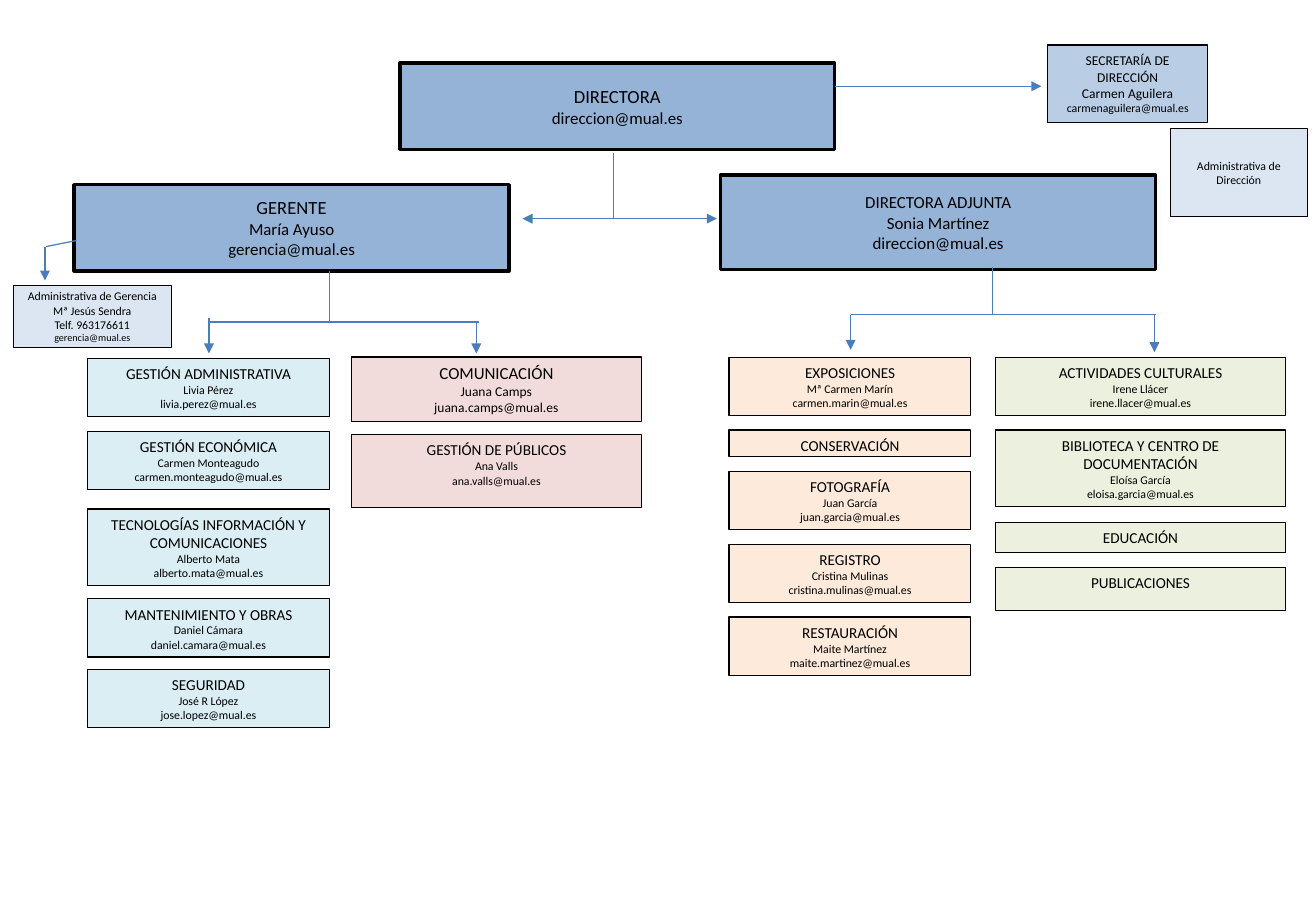
from lxml import etree
from pptx import Presentation
from pptx.dml.color import RGBColor
from pptx.enum.shapes import MSO_CONNECTOR, MSO_SHAPE
from pptx.enum.text import MSO_ANCHOR, PP_ALIGN
from pptx.oxml.ns import qn
from pptx.util import Pt

PX = 9144
RECT = MSO_SHAPE.RECTANGLE
STRAIGHT = MSO_CONNECTOR.STRAIGHT
TOP, MIDDLE = MSO_ANCHOR.TOP, MSO_ANCHOR.MIDDLE
CENTER = PP_ALIGN.CENTER
COLORS = {
    "black": "000000", "head": "95B3D7", "secretary": "B9CDE5", "assistant": "DCE6F2",
    "management": "DBEEF4", "communication": "F2DCDB", "collection": "FDEADA",
    "activities": "EBF1DE", "arrow": "4A7EBB", "branch": "4B7EBC",
}

HEADS = [
    (329, 52, 71, ["DIRECTORA", "direccion@mual.es"], [11, 10]),
    (61, 152, 71, ["GERENTE", "María Ayuso", "gerencia@mual.es"], [11, 10, 10]),
    (593, 144, 78, ["DIRECTORA ADJUNTA", "Sonia Martínez", "direccion@mual.es"], [10, 10, 10]),
]
ASSISTANTS = [
    (862, 37, 132, 64, "secretary",
     ["SECRETARÍA DE DIRECCIÓN", "Carmen Aguilera", "carmenaguilera@mual.es"], [8, 8, 7]),
    (11, 235, 130, 51, "assistant",
     ["Administrativa de Gerencia", "Mª Jesús Sendra", "Telf. 963176611", "gerencia@mual.es"],
     [7, 7, 7, 6]),
    (963, 106, 113, 72, "assistant", ["Administrativa de Dirección"], [7]),
]
DEPARTMENTS = [
    (72, 199, "management", [
        (295, 48, ["GESTIÓN ADMINISTRATIVA", "Livia Pérez", "livia.perez@mual.es"]),
        (355, 48, ["GESTIÓN ECONÓMICA", "Carmen Monteagudo", "carmen.monteagudo@mual.es"]),
        (419, 63, ["TECNOLOGÍAS INFORMACIÓN Y COMUNICACIONES", "Alberto Mata",
                   "alberto.mata@mual.es"]),
        (493, 48, ["MANTENIMIENTO Y OBRAS", "Daniel Cámara", "daniel.camara@mual.es"]),
        (551, 48, ["SEGURIDAD", "José R López", "jose.lopez@mual.es"]),
    ]),
    (289, 239, "communication", [
        (294, 53, ["COMUNICACIÓN", "Juana Camps", "juana.camps@mual.es"]),
        (358, 60, ["GESTIÓN DE PÚBLICOS", "Ana Valls", "ana.valls@mual.es"]),
    ]),
    (600, 199, "collection", [
        (294, 48, ["EXPOSICIONES", "Mª Carmen Marín", "carmen.marin@mual.es"]),
        (354, 22, ["CONSERVACIÓN"]),
        (388, 48, ["FOTOGRAFÍA", "Juan García", "juan.garcia@mual.es"]),
        (448, 48, ["REGISTRO", "Cristina Mulinas", "cristina.mulinas@mual.es"]),
        (508, 48, ["RESTAURACIÓN", "Maite Martínez", "maite.martinez@mual.es"]),
    ]),
    (819, 239, "activities", [
        (294, 48, ["ACTIVIDADES CULTURALES", "Irene Llácer", "irene.llacer@mual.es"]),
        (354, 63, ["BIBLIOTECA Y CENTRO DE DOCUMENTACIÓN", "Eloísa García",
                   "eloisa.garcia@mual.es"]),
        (430, 25, ["EDUCACIÓN"]),
        (467, 36, ["PUBLICACIONES"]),
    ]),
]
ARROWS = [
    (687, 71, 857, 71), (504, 180, 430, 180), (504, 180, 590, 180), (37, 203, 37, 231),
    (172, 262, 172, 291), (392, 265, 392, 291), (700, 259, 700, 288), (950, 259, 950, 290),
]
BRANCHES = [
    (505, 126, 505, 180), (271, 223, 271, 265), (171, 265, 394, 265),
    (817, 220, 817, 259), (700, 259, 951, 259),
]


def write(p, text, size=9, color="black", font="Calibri", align=CENTER):
    p.alignment = align
    r = p.add_run()
    r.text = text
    r.font.size = Pt(size)
    r.font.name = font
    r.font.color.rgb = RGBColor.from_string(COLORS[color])


class OrgChart:
    """Draw organisation chart elements on one slide, in px."""

    def __init__(self, s):
        self.s = s

    def box(self, x, y, w, h, fill, lines, sizes, border=0.75, anchor=MIDDLE):
        sp = self.s.shapes.add_shape(RECT, x * PX, y * PX, w * PX, h * PX)
        sp.shadow.inherit = False
        sp.fill.solid()
        sp.fill.fore_color.rgb = RGBColor.from_string(COLORS[fill])
        sp.line.color.rgb = RGBColor.from_string(COLORS["black"])
        sp.line.width = Pt(border)
        tf = sp.text_frame
        tf.word_wrap = True
        tf.vertical_anchor = anchor
        tf.margin_left = tf.margin_right = 9 * PX
        tf.margin_top = tf.margin_bottom = 5 * PX
        for i, (text, size) in enumerate(zip(lines, sizes)):
            p = tf.add_paragraph() if i else tf.paragraphs[0]
            write(p, text, size=size)

    def line(self, x1, y1, x2, y2, color="branch", arrow=False):
        c = self.s.shapes.add_connector(STRAIGHT, x1 * PX, y1 * PX, x2 * PX, y2 * PX)
        c.line.color.rgb = RGBColor.from_string(COLORS[color])
        c.line.width = Pt(0.75)
        if arrow:
            etree.SubElement(c.line._get_or_add_ln(), qn("a:tailEnd"), type="triangle")
        etree.SubElement(c._element.spPr, qn("a:effectLst"))


def main():
    prs = Presentation()
    prs.slide_width, prs.slide_height = 1083 * PX, 750 * PX
    chart = OrgChart(prs.slides.add_slide(prs.slide_layouts[6]))
    for x, y, h, lines, sizes in HEADS:
        chart.box(x, y, 358, h, "head", lines, sizes, border=2)
    for assistant in ASSISTANTS:
        chart.box(*assistant)
    for x, w, fill, units in DEPARTMENTS:
        for y, h, lines in units:
            sizes = [10, 8, 8] if lines[0] == "COMUNICACIÓN" else [9, 7, 7]
            chart.box(x, y, w, h, fill, lines, sizes, anchor=TOP)
    for ends in ARROWS:
        chart.line(*ends, color="arrow", arrow=True)
    for ends in BRANCHES:
        chart.line(*ends)
    chart.line(38, 203, 63, 198, color="arrow")
    prs.save("out.pptx")


if __name__ == "__main__":
    main()
